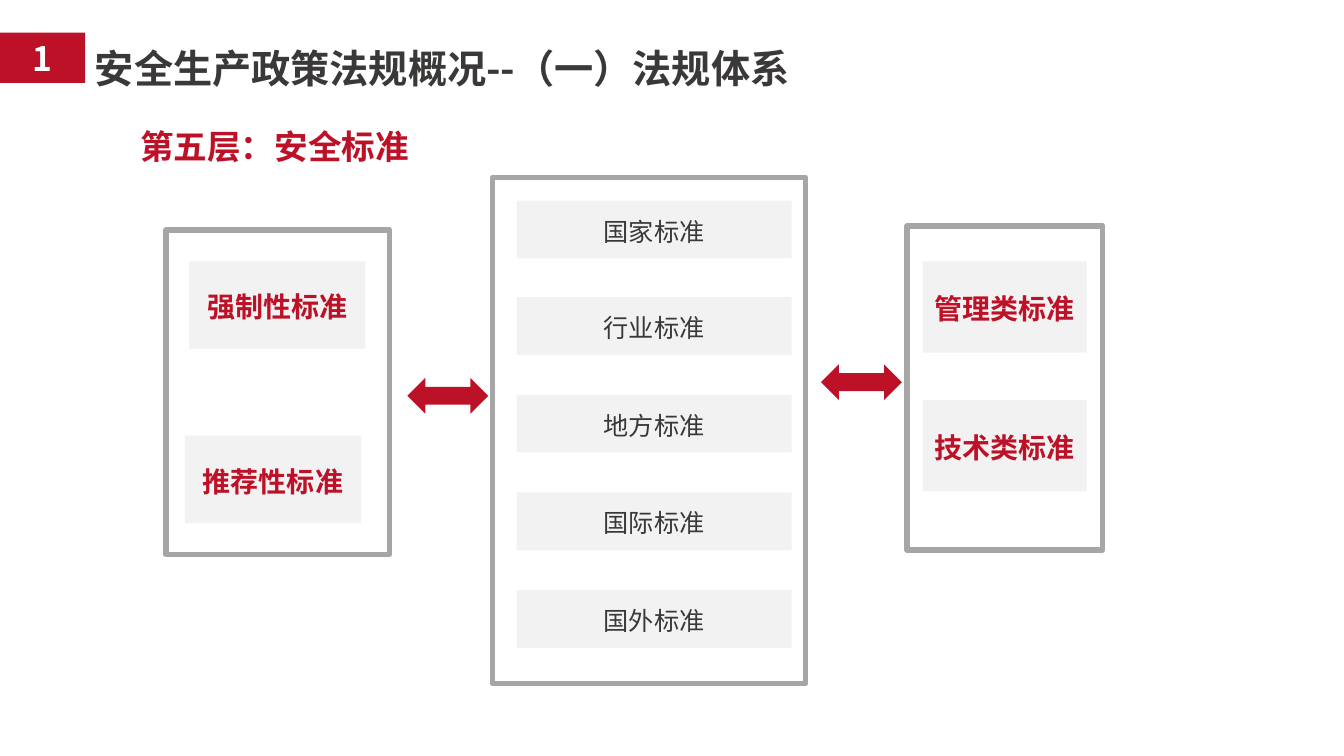
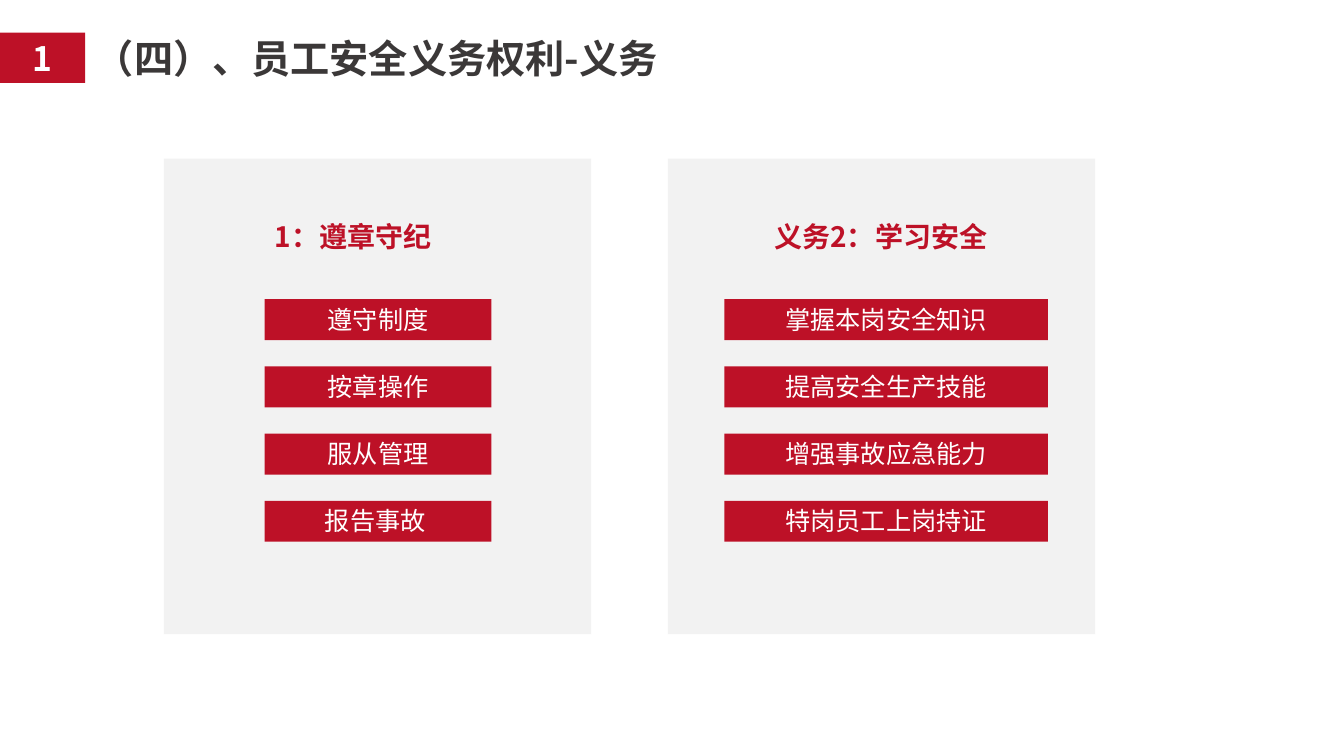
import lxml.etree
import pptx
import pptx.dml.color
import pptx.enum.shapes
import pptx.enum.text
import pptx.oxml.ns
import pptx.util

PX = 9525
FONT = "Noto Sans CJK SC"
COLORS = {
    "red": "BD1127",
    "dark": "3B3838",
    "white": "FFFFFF",
    "pale": "F2F2F2",
    "gray": "A6A6A6",
}
SHAPES = pptx.enum.shapes.MSO_SHAPE
ANCHOR = pptx.enum.text.MSO_ANCHOR
ALIGN = pptx.enum.text.PP_ALIGN


def rgb(name):
    return pptx.dml.color.RGBColor.from_string(COLORS[name])


class Deck:
    def __init__(self):
        self.prs = pptx.Presentation()
        self.prs.slide_width = 1280 * PX
        self.prs.slide_height = 720 * PX
        self.s = None

    def slide(self, title, y, w):
        self.s = self.prs.slides.add_slide(self.prs.slide_layouts[6])
        self.label(title, 81, y, w, 55, 28, "dark")
        self.box(0, 31, 81, 48, "red", "1", 24, "white", bold=True)

    def set_text(self, sp, text, size, color, bold, align, spacing=None, anchor=ANCHOR.TOP):
        tf = sp.text_frame
        tf.word_wrap = True
        tf.vertical_anchor = anchor
        p = tf.paragraphs[0]
        p.text = text
        p.alignment = align
        if spacing:
            p.line_spacing = spacing
        font = p.font
        font.size = pptx.util.Pt(size)
        font.bold = bold
        font.color.rgb = rgb(color)
        font.name = FONT
        props = p._p.pPr.find(pptx.oxml.ns.qn("a:defRPr"))
        ea = lxml.etree.SubElement(props, pptx.oxml.ns.qn("a:ea"))
        ea.set("typeface", FONT)

    def label(self, text, x, y, w, h, size, color):
        sp = self.s.shapes.add_textbox(x * PX, y * PX, w * PX, h * PX)
        self.set_text(sp, text, size, color, True, ALIGN.LEFT)

    def shape(self, kind, x, y, w, h, fill=None):
        sp = self.s.shapes.add_shape(kind, x * PX, y * PX, w * PX, h * PX)
        sp.shadow.inherit = False
        sp.line.fill.background()
        if fill:
            sp.fill.solid()
            sp.fill.fore_color.rgb = rgb(fill)
        else:
            sp.fill.background()
        return sp

    def box(self, x, y, w, h, fill, text, size, color, bold=False, **style):
        sp = self.shape(SHAPES.RECTANGLE, x, y, w, h, fill)
        self.set_text(sp, text, size, color, bold, ALIGN.CENTER, **style)

    def tile(self, text, x, y, w, h, size=20, color="red", bold=True):
        self.box(x, y, w, h, "pale", text, size, color, bold,
                 spacing=1.1, anchor=ANCHOR.MIDDLE)

    def frame(self, x, y, w, h):
        sp = self.shape(SHAPES.RECTANGLE, x, y, w, h)
        sp.line.color.rgb = rgb("gray")
        sp.line.width = pptx.util.Pt(4)

    def arrow(self, x, y):
        self.shape(SHAPES.LEFT_RIGHT_ARROW, x, y, 77, 34, "red")

    def duty_card(self, x, heading, heading_x, heading_w, bar_x, bar_w, duties):
        self.shape(SHAPES.RECTANGLE, x, 151, 407, 453, "pale")
        self.label(heading, heading_x, 204, heading_w, 42, 20, "red")
        for i, duty in enumerate(duties):
            self.box(bar_x, 285 + 64 * i, bar_w, 39, "red", duty, 18, "white")


def standards_slide(deck):
    deck.slide("安全生产政策法规概况--（一）法规体系", 37, 893)
    deck.label("第五层：安全标准", 124, 115, 277, 48, 24, "red")

    levels = ["国家标准", "行业标准", "地方标准", "国际标准", "国外标准"]
    for i, level in enumerate(levels):
        deck.tile(level, 492, 191 + 371 * i // 4, 262, 55, 18, "dark", False)
    deck.frame(469, 169, 298, 482)

    for i, category in enumerate(["管理类标准", "技术类标准"]):
        deck.tile(category, 879, 249 + 132 * i, 156, 87)
    deck.frame(864, 215, 186, 309)

    deck.tile("强制性标准", 180, 249, 168, 83)
    deck.tile("推荐性标准", 176, 415, 168, 83)
    deck.frame(158, 219, 213, 309)

    deck.arrow(388, 360)
    deck.arrow(782, 347)


def duties_slide(deck):
    deck.slide("（四）、员工安全义务权利-义务", 28, 664)
    deck.duty_card(156, "1：遵章守纪", 252, 170, 252, 216,
                   ["遵守制度", "按章操作", "服从管理", "报告事故 "])
    deck.duty_card(636, "义务2：学习安全", 728, 224, 690, 308,
                   ["掌握本岗安全知识", "提高安全生产技能", "增强事故应急能力", "特岗员工上岗持证"])


def main():
    deck = Deck()
    standards_slide(deck)
    duties_slide(deck)
    deck.prs.save("out.pptx")


if __name__ == "__main__":
    main()
